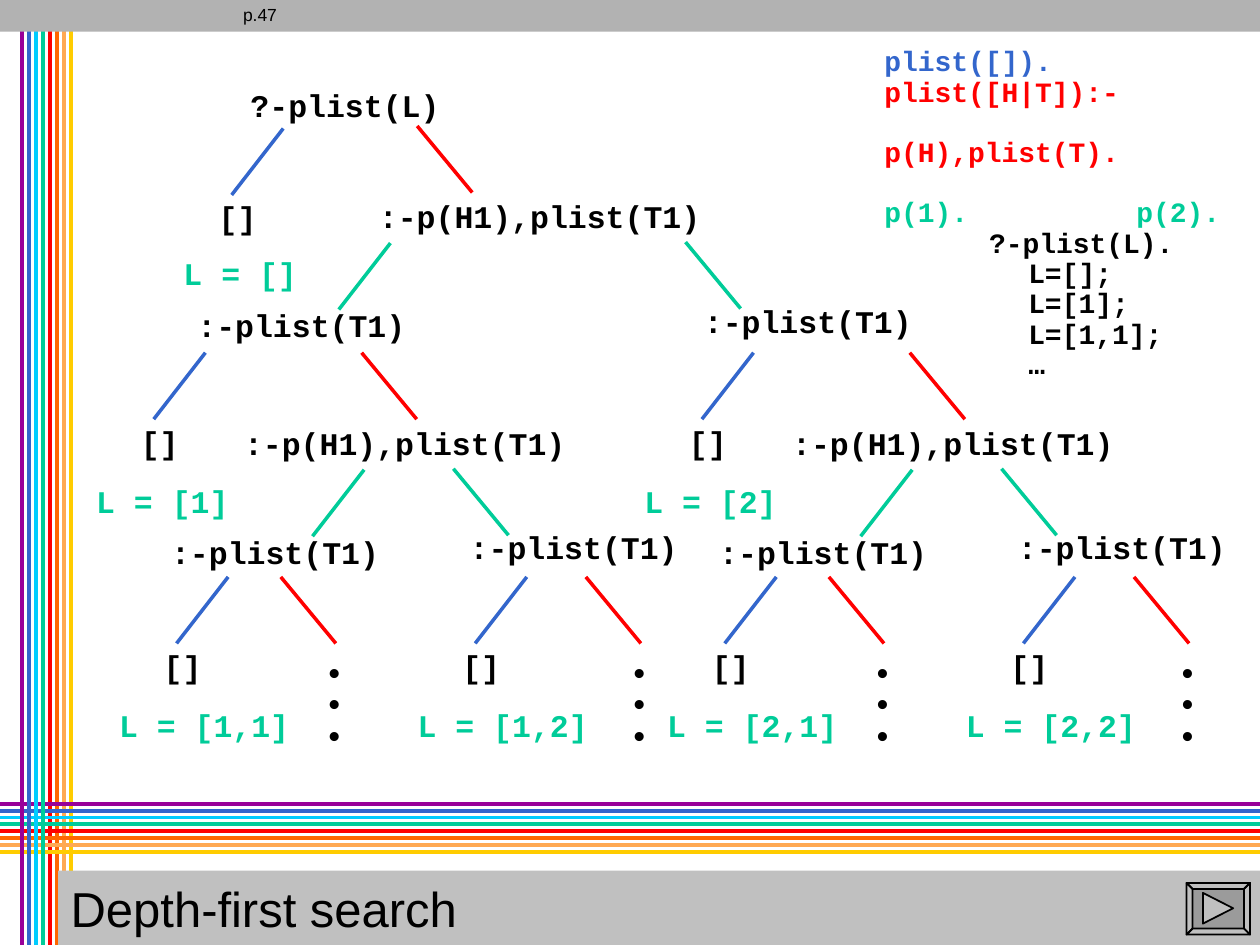
from dataclasses import dataclass
from pptx import Presentation
from pptx.dml.color import RGBColor
from pptx.enum.shapes import MSO_CONNECTOR, MSO_SHAPE
from pptx.enum.text import MSO_ANCHOR, PP_ALIGN
from pptx.oxml.ns import qn
from pptx.util import Cm, Pt
from lxml.etree import SubElement


@dataclass(frozen=True)
class Theme:
    """Colours, fonts and type sizes of the slide."""
    black: str = "000000"
    blue: str = "3366CC"
    green: str = "00CC99"
    red: str = "FF0000"
    band: str = "B2B2B2"
    bar: str = "C0C0C0"
    key: str = "9B9B9B"
    bows: tuple = ("990099", "3366CC", "00CCFF", "00CC99",
                   "FF0000", "FF6600", "FFA953", "FFCC00")
    sans: str = "Arial"
    mono: str = "Courier New"
    title: int = 28
    node: int = 18
    code: int = 16
    page: int = 10


T = Theme()
GOAL = ":-p(H1),plist(T1)"
CALL = ":-plist(T1)"
HALF = 11.05


def rgb(hue):
    """Turn a hex string into a colour."""
    return RGBColor.from_string(hue)


def style(par, hue, size, face=T.mono, bold=True):
    """Format every run of a paragraph."""
    for run in par.runs:
        font = run.font
        font.name, font.size, font.bold = face, Pt(size), bold
        font.color.rgb = rgb(hue)


def line(slide, start, end, hue, width=2):
    """Draw a straight line without shadow."""
    rule = slide.shapes.add_connector(
        MSO_CONNECTOR.STRAIGHT, *map(Cm, start + end))
    rule.line.color.rgb = rgb(hue)
    rule.line.width = Pt(width)
    SubElement(rule.element.find(qn("p:spPr")), qn("a:effectLst"))


def label(slide, x, y, text, hue=T.black):
    """Place one tree label, as wide as its text."""
    wide = 0.56 + 0.38 * len(text)
    box = slide.shapes.add_textbox(Cm(x), Cm(y), Cm(wide), Cm(0.94))
    box.text_frame.word_wrap = False
    par = box.text_frame.paragraphs[0]
    par.text = text
    par.line_spacing = 0.9
    style(par, hue, T.node)


def listing(slide, place, rows):
    """Place code rows of text, colour, space before and indent."""
    frame = slide.shapes.add_textbox(*map(Cm, place)).text_frame
    frame.word_wrap = True
    for i, (text, hue, gap, dent) in enumerate(rows):
        par = frame.add_paragraph() if i else frame.paragraphs[0]
        par.text = text
        par.line_spacing = 0.9
        par.space_before = Pt(gap)
        props = par._p.get_or_add_pPr()
        props.set("marL", str(Cm(dent)))
        props.set("defTabSz", str(Cm(2.54)))
        style(par, hue, T.code)


def left(slide, x, y, hue):
    """Draw a branch down to the left."""
    line(slide, (x, y), (x - 1.04, y + 1.34), hue)


def right(slide, x, y, hue):
    """Draw a branch down to the right."""
    line(slide, (x, y), (x + 1.11, y + 1.34), hue)


def found(slide, x, y, text, lead=2.45, drop=2.57):
    """Draw a blue branch, its empty goal and the answer."""
    left(slide, x, y, T.blue)
    label(slide, x - 1.55, y + 1.37, "[]")
    label(slide, x - lead, y + drop, text, T.green)


def leaf(slide, x, y, text, gap):
    """Draw a lowest call with its answer and endless branch."""
    label(slide, x - 1.4, y, CALL)
    found(slide, x, 11.63, text)
    right(slide, x + gap, 11.63, T.red)
    for i in range(3):
        label(slide, x + gap + 0.64, 13.13 + 0.63 * i, "•")


def half(slide, dx, num):
    """Draw the subtree below one choice for H1."""
    found(slide, 4.14 + dx, 7.11, f"L = [{num}]")
    right(slide, 7.29 + dx, 7.11, T.red)
    label(slide, 4.67 + dx, 8.51, GOAL)
    left(slide, 7.34 + dx, 9.47, T.green)
    right(slide, 9.14 + dx, 9.45, T.green)
    leaf(slide, 4.6 + dx, 10.7, f"L = [{num},1]", 1.06)
    leaf(slide, 10.62 + dx, 10.61, f"L = [{num},2]", 1.19)


def tree(slide):
    """Draw the whole search tree."""
    label(slide, 4.8, 1.7, "?-plist(L)")
    found(slide, 5.71, 2.59, "L = []", 2.26, 2.49)
    right(slide, 8.41, 2.54, T.red)
    label(slide, 7.39, 3.94, GOAL)
    left(slide, 7.87, 4.9, T.green)
    right(slide, 13.82, 4.88, T.green)
    label(slide, 3.73, 6.14, CALL)
    label(slide, 13.94, 6.05, CALL)
    for i in range(2):
        half(slide, HALF * i, i + 1)


def weave(slide):
    """Draw the crossing rainbow stripes and the top band."""
    bows = list(enumerate(T.bows))

    def post(part):
        """Draw upright stripes."""
        for i, hue in part:
            x = 0.45 + 0.14 * i
            line(slide, (x, 0), (x, 19.05), hue, 2.25)

    post(bows[4:])
    for i, hue in bows:
        y = 16.2 + 0.14 * i
        line(slide, (25.4, y), (0, y), hue, 2.25)
    post(bows[:4])
    band = slide.shapes.add_shape(
        MSO_SHAPE.RECTANGLE, 0, 0, Cm(25.4), Cm(0.64))
    band.shadow.inherit = False
    band.fill.solid()
    band.fill.fore_color.rgb = rgb(T.band)
    band.line.fill.background()


def head(slide, text):
    """Set the title bar above the stripes."""
    bar = slide.shapes.title
    bar.element.getparent().append(bar.element)
    bar.left, bar.top, bar.width, bar.height = map(
        Cm, (1.17, 17.55, 24.23, 1.52))
    bar.fill.solid()
    bar.fill.fore_color.rgb = rgb(T.bar)
    bar.text_frame.text = text
    bar.text_frame.vertical_anchor = MSO_ANCHOR.MIDDLE
    par = bar.text_frame.paragraphs[0]
    par.alignment = PP_ALIGN.LEFT
    style(par, T.black, T.title, T.sans, False)


def page(slide, text):
    """Write the page mark in the top band."""
    box = slide.shapes.add_textbox(Cm(4.65), 0, Cm(1.93), Cm(0.64))
    box.text_frame.text = text
    box.text_frame.word_wrap = False
    par = box.text_frame.paragraphs[0]
    par.line_spacing = 0.9
    style(par, T.black, T.page, T.sans, False)


def button(slide):
    """Draw the bevelled button with its arrow."""
    rim = [(23.92, 17.8), (25.2, 17.8), (25.2, 18.84), (23.92, 18.84)]
    core = [(24.04, 17.92), (25.08, 17.92), (25.08, 18.72), (24.04, 18.72)]
    sides = [[rim[i - 1], rim[i], core[i], core[i - 1]] for i in range(4)]
    arrow = [(24.25, 18), (24.86, 18.31), (24.25, 18.62)]
    pen = slide.shapes.build_freeform(*map(Cm, rim[0]))
    pen.add_line_segments([tuple(map(Cm, p)) for p in rim[1:]])
    for ring in sides + [arrow]:
        pen.move_to(*map(Cm, ring[0]))
        pen.add_line_segments([tuple(map(Cm, p)) for p in ring[1:]])
    key = pen.convert_to_shape()
    key.shadow.inherit = False
    key.fill.solid()
    key.fill.fore_color.rgb = rgb(T.key)
    key.line.color.rgb = rgb(T.black)
    key.line.width = Pt(1)


def main():
    """Build and save the slide."""
    deck = Presentation()
    deck.slide_width, deck.slide_height = Cm(25.4), Cm(19.05)
    slide = deck.slides.add_slide(deck.slide_layouts[5])
    weave(slide)
    head(slide, "Depth-first search")
    page(slide, "p.47")
    button(slide)
    listing(slide, (17.58, 0.84, 7.42, 3.28), [
        ("plist([]).", T.blue, 0, 0), ("plist([H|T]):-", T.red, 0, 0),
        ("\tp(H),plist(T).", T.red, 0, 0),
        ("p(1).\t\tp(2).", T.green, 17, 0)])
    found = ("L=[];", "L=[1];", "L=[1,1];", "…")
    listing(slide, (19.69, 4.5, 5.28, 3.28), [
        ("?-plist(L).", T.black, 0, 0),
        *((text, T.black, 0, 0.79) for text in found)])
    tree(slide)
    deck.save("out.pptx")


if __name__ == "__main__":
    main()
